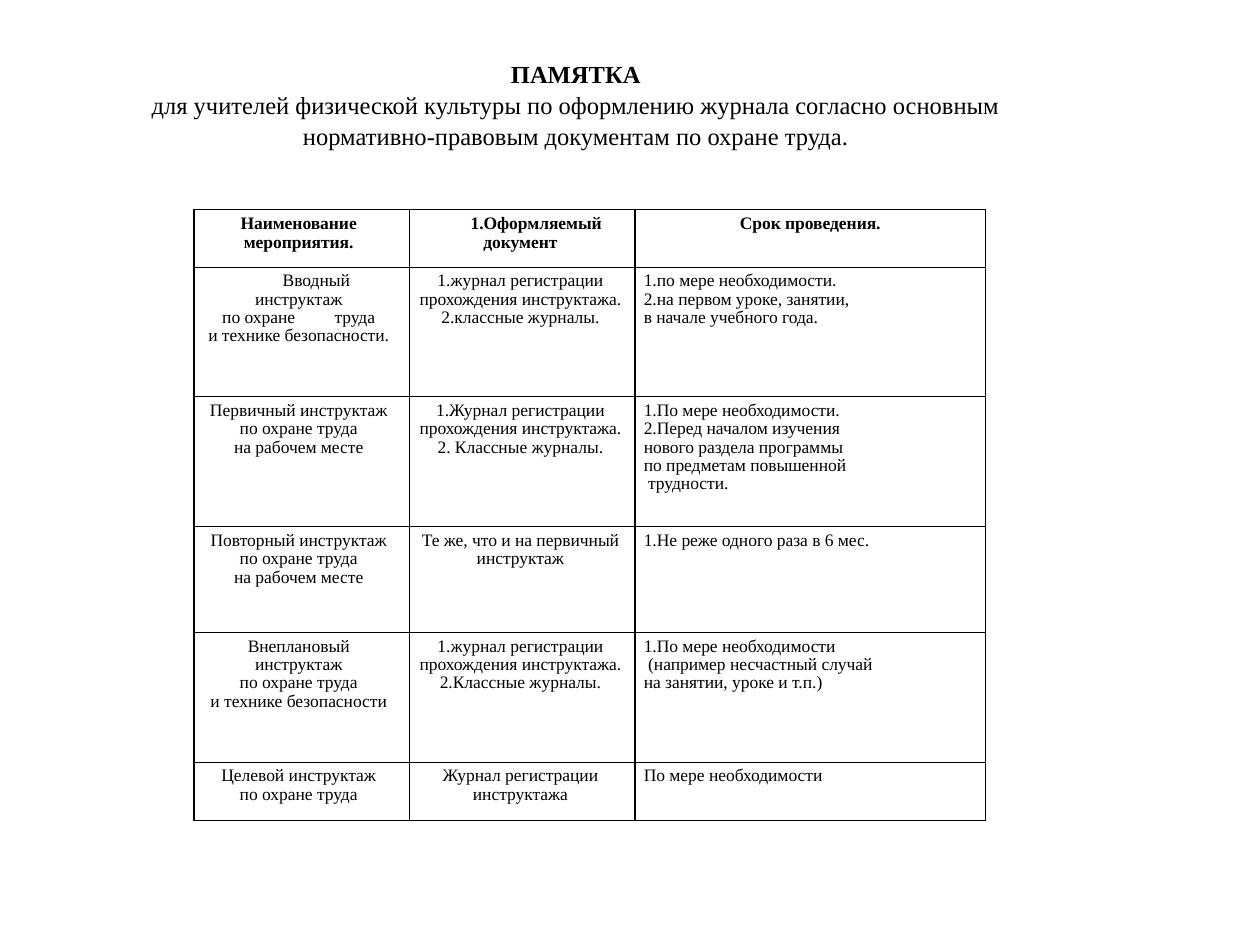
from lxml import etree
from pptx import Presentation
from pptx import util as u
from pptx.dml.color import RGBColor
from pptx.enum import text as t
from pptx.oxml import ns

FONT = "Times New Roman"
HUES = {"ink": "000000"}
HEAD = [
    ("ПАМЯТКА", True),
    ("для учителей физической культуры по оформлению журнала согласно основным "
     "нормативно-правовым документам по охране труда.", False),
]
WORK = "по охране труда"
SITE = "на рабочем месте"
BOOK = "1.журнал регистрации прохождения инструктажа."
ROWS = [
    (["Наименование", "мероприятия."], ["Оформляемый документ"], ["Срок проведения."]),
    (["Вводный инструктаж", ("по охране", " ", "труда"), "и технике безопасности."],
     [BOOK, "2.классные журналы."],
     ["1.по мере необходимости.", "2.на первом уроке, занятии,", "в начале учебного года."]),
    (["Первичный инструктаж", WORK, SITE],
     [BOOK.replace("ж", "Ж", 1), "2. Классные журналы."],
     ["1.По мере необходимости.", "2.Перед началом изучения", "нового раздела программы",
      "по предметам повышенной", " трудности."]),
    (["Повторный инструктаж", WORK, SITE],
     ["Те же, что и на первичный инструктаж"],
     ["1.Не реже одного раза в 6 мес."]),
    (["Внеплановый инструктаж", WORK, "и технике безопасности"],
     [BOOK, "2.Классные журналы."],
     ["1.По мере необходимости", " (например несчастный случай", "на занятии, уроке и т.п.)"]),
    (["Целевой инструктаж", WORK], ["Журнал регистрации инструктажа"],
     ["По мере необходимости"]),
]
COLS = [1.71, 1.79, 2.78]
TALL = [0.46, 1.03, 1.03, 0.84, 1.03, 0.46]
PADS = [0.12, 0.1, 0.07]


def add_run(para, words, size, bold):
    run = para.add_run()
    run.text = words
    font = run.font
    font.name, font.size, font.bold = FONT, u.Pt(size), bold
    font.color.rgb = RGBColor.from_string(HUES["ink"])
    return run


def add_lines(frame, lines):
    for i, line in enumerate(lines):
        para = frame.paragraphs[0] if i == 0 else frame.add_paragraph()
        yield para, line


def add_edges(cell):
    props = cell._tc.get_or_add_tcPr()
    for side in ("lnL", "lnR", "lnT", "lnB"):
        edge = etree.SubElement(props, ns.qn("a:" + side), w=str(u.Pt(0.75)))
        fill = etree.SubElement(edge, ns.qn("a:solidFill"))
        etree.SubElement(fill, ns.qn("a:srgbClr"), val=HUES["ink"])


def fill_cell(cell, lines, row, col):
    add_edges(cell)
    cell.fill.background()
    cell.margin_left, cell.margin_right = u.Inches(0.07), u.Inches(PADS[col])
    cell.margin_top = cell.margin_bottom = u.Inches(0.04)
    for para, line in add_lines(cell.text_frame, lines):
        mid = row == 0 or col < 2
        para.alignment = t.PP_ALIGN.CENTER if mid else t.PP_ALIGN.LEFT
        para.line_spacing = 1.0 if row == 0 else 0.95
        for part in [line] if isinstance(line, str) else line:
            run = add_run(para, part, 10, row == 0)
            if part == " ":
                run._r.get_or_add_rPr().set("spc", "2000")


def set_dent(cell, dent):
    props = cell.text_frame.paragraphs[0]._p.get_or_add_pPr()
    props.set("marL", "0")
    props.set("indent", str(u.Inches(dent)))
    return props


def main():
    deck = Presentation()
    deck.slide_width, deck.slide_height = u.Inches(10), u.Inches(7.5)
    slide = deck.slides.add_slide(deck.slide_layouts[5])

    title = slide.shapes.title
    title.left, title.top = u.Inches(0.91), u.Inches(0.46)
    title.width, title.height = u.Inches(7.32), u.Inches(0.75)
    frame = title.text_frame
    frame.word_wrap, frame.auto_size = True, t.MSO_AUTO_SIZE.NONE
    frame.vertical_anchor = t.MSO_ANCHOR.TOP
    frame.margin_left = frame.margin_right = frame.margin_top = frame.margin_bottom = 0
    for para, (words, bold) in add_lines(frame, HEAD):
        para.alignment, para.line_spacing = t.PP_ALIGN.CENTER, 1.05
        para.space_before = u.Pt(0)
        add_run(para, words, 14, bold)

    table = slide.shapes.add_table(
        len(ROWS), len(COLS), u.Inches(1.54), u.Inches(1.66),
        u.Inches(sum(COLS)), u.Inches(sum(TALL))).table
    table.first_row = table.horz_banding = False
    for col, wide in zip(table.columns, COLS):
        col.width = u.Inches(wide)
    for row, tall in zip(table.rows, TALL):
        row.height = u.Inches(tall)
    for r, row in enumerate(ROWS):
        for c, lines in enumerate(row):
            fill_cell(table.cell(r, c), lines, r, c)

    set_dent(table.cell(1, 0), 0.28)
    props = set_dent(table.cell(0, 1), 0.25)
    etree.SubElement(props, ns.qn("a:buFont"), typeface=FONT)
    etree.SubElement(props, ns.qn("a:buAutoNum"), type="arabicPeriod")
    deck.save("out.pptx")


if __name__ == "__main__":
    main()
